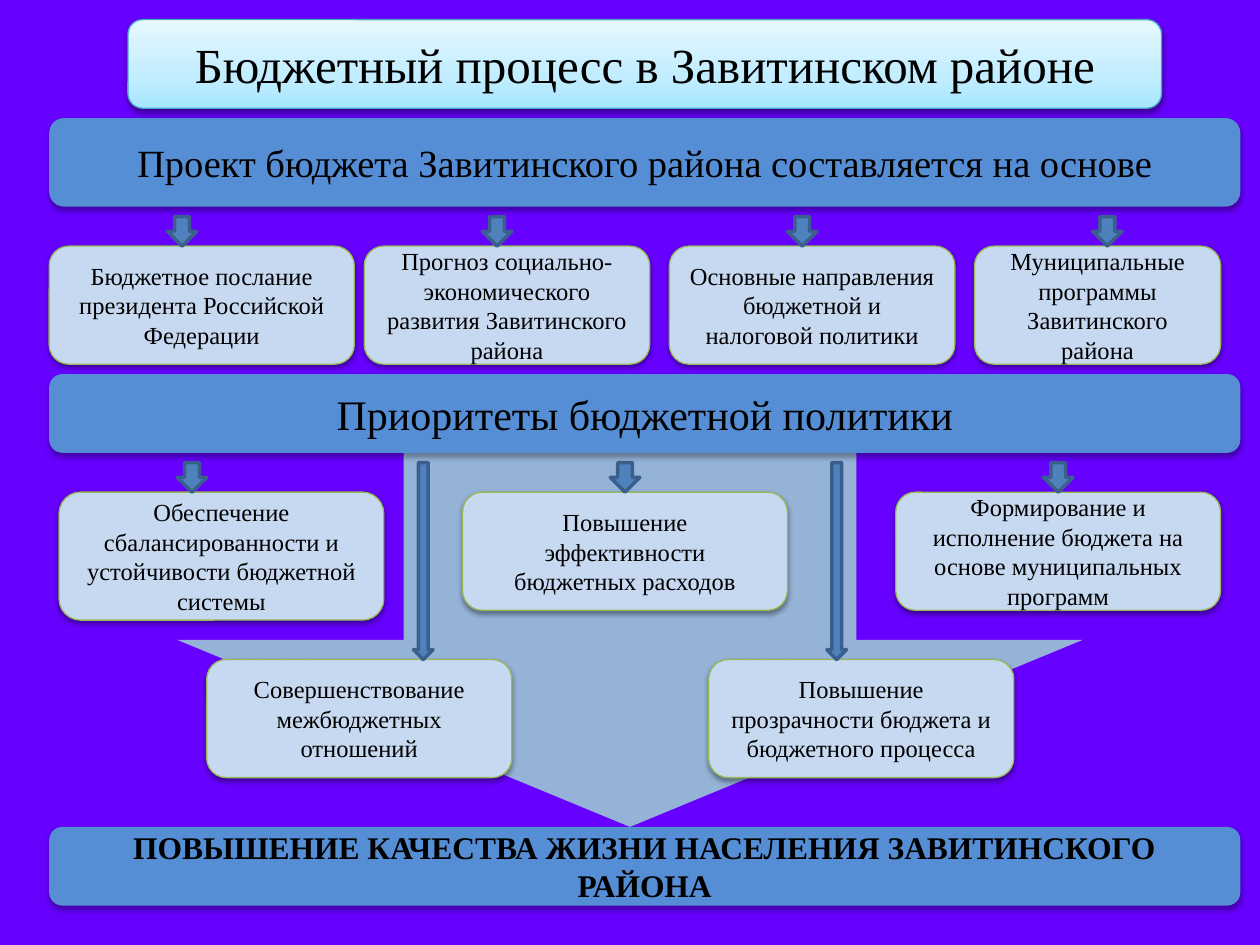
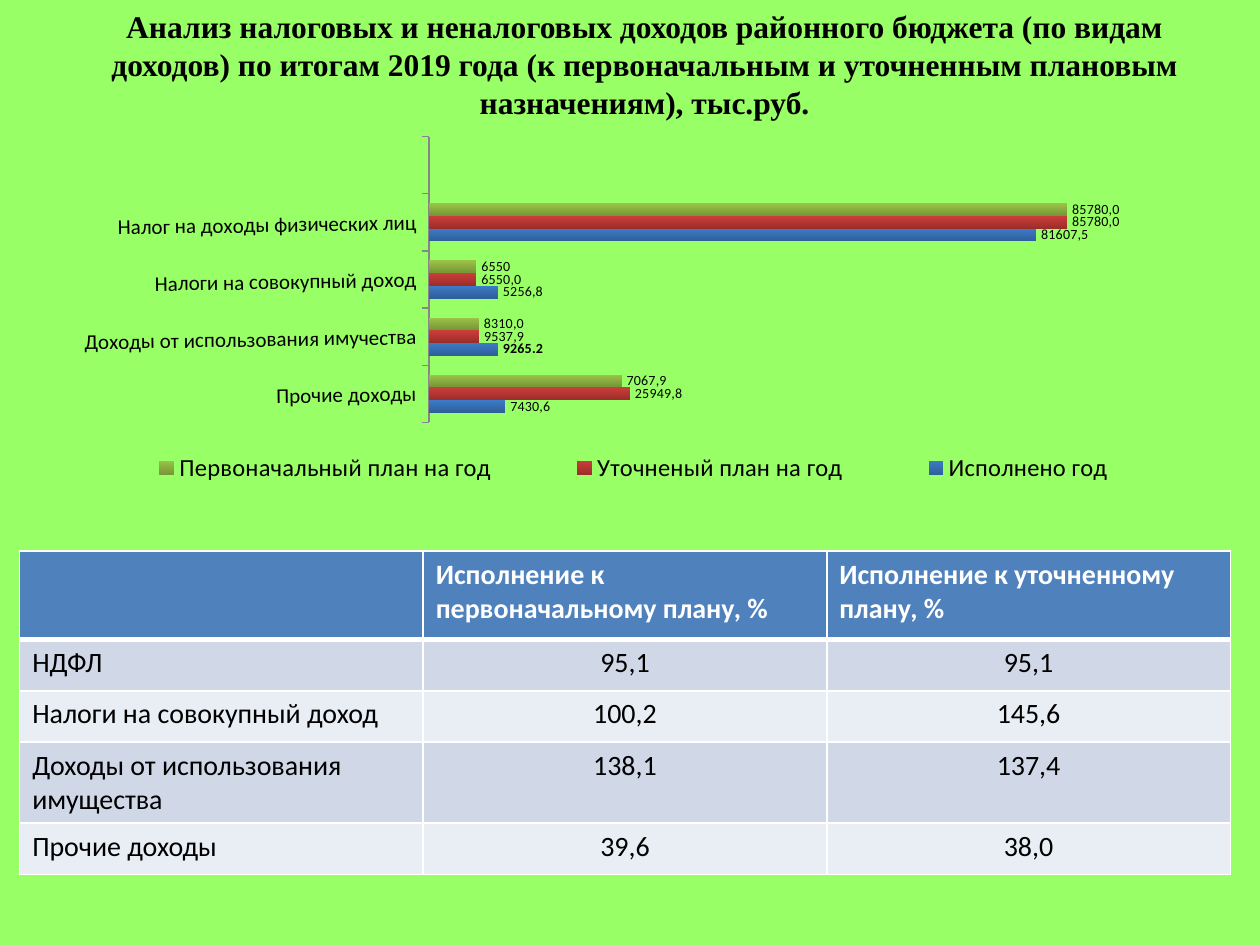
import copy
import pptx
import pptx.chart.data
import pptx.dml.color
import pptx.enum.chart
import pptx.enum.shapes
import pptx.enum.text
import pptx.oxml
import pptx.oxml.ns
import pptx.util
from lxml import etree

Pt = pptx.util.Pt
Rgb = pptx.dml.color.RGBColor.from_string
qn = pptx.oxml.ns.qn
Kind = pptx.enum.shapes.MSO_SHAPE
Align = pptx.enum.text.PP_ALIGN
Place = pptx.enum.chart

HUE = {
    "violet": "6600FF", "lime": "99FF66", "black": "000000", "white": "FFFFFF",
    "band": "558ED5", "card": "C6D9F1", "edge": "98B955", "funnel": "95B3D7",
    "arrow": "4F81BD", "rim": "3A5F8C", "frost": "46AAC5", "axis": "868686",
    "head": "4F81BD", "odd": "D0D8E8", "even": "E9EDF4",
}
SERIF, SANS = "Times New Roman", "Calibri"

deck = pptx.Presentation()
deck.slide_width = pptx.util.Inches(10)
deck.slide_height = pptx.util.Inches(7.5)
UNIT = deck.slide_width // 128  # the slide is a grid of 128 columns by 96 rows


def write(frame, text, size=14, font=SERIF, hue="black", bold=False, align=Align.CENTER):
    para = frame.paragraphs[0]
    para.alignment = align
    run = para.add_run()
    run.text = text
    run.font.size = Pt(size)
    run.font.name = font
    run.font.bold = bold
    run.font.color.rgb = Rgb(HUE[hue])


def block(slide, spot, kind=Kind.ROUNDED_RECTANGLE, fill=None, line=None,
          width=0.75, drop=0, dark=38, text="", **form):
    """Add a shape at spot (column, row, columns, rows); drop is the shadow's distance in points."""
    shape = slide.shapes.add_shape(kind, *[n * UNIT for n in spot])
    shape.shadow.inherit = False
    if fill:
        shape.fill.solid()
        shape.fill.fore_color.rgb = Rgb(HUE[fill])
    else:
        shape.fill.background()
    if line:
        shape.line.color.rgb = Rgb(HUE[line])
        shape.line.width = Pt(width)
    else:
        shape.line.fill.background()
    if drop:
        glow = etree.SubElement(
            shape._element.spPr.find(qn("a:effectLst")), qn("a:outerShdw"),
            blurRad=str(Pt(3.1)), dist=str(Pt(drop)), dir="5400000", rotWithShape="0")
        tint = etree.SubElement(glow, qn("a:srgbClr"), val=HUE["black"])
        etree.SubElement(tint, qn("a:alpha"), val=str(dark * 1000))
    if text:
        shape.text_frame.word_wrap = True
        shape.text_frame.vertical_anchor = pptx.enum.text.MSO_ANCHOR.MIDDLE
        write(shape.text_frame, text, **form)
    return shape


pages = []
for hue in ("violet", "lime"):
    page = deck.slides.add_slide(deck.slide_layouts[6])
    page.background.fill.solid()
    page.background.fill.fore_color.rgb = Rgb(HUE[hue])
    pages.append(page)
flow, review = pages

# Slide 1: budget process
block(flow, (18, 46, 92, 38), Kind.DOWN_ARROW, fill="funnel")

title = block(flow, (13, 2, 105, 9), fill="card", line="frost", drop=1.6,
              text="Бюджетный процесс в Завитинском районе", size=28)
title.fill.gradient()
title.fill.gradient_angle = 90
stops = title.fill.gradient_stops
first = stops[0]._gs
first.addnext(copy.deepcopy(first))
shades = ((0, "A7E6FF"), (0.35, "C1EDFF"), (1, "E7F8FF"))
for stop, (part, shade) in zip(title.fill.gradient_stops, shades):
    stop.position = part
    stop.color.rgb = Rgb(shade)

bands = [
    (12, 9, "Проект бюджета Завитинского района составляется на основе", 22, False),
    (38, 8, "Приоритеты бюджетной политики", 24, False),
    (84, 8, "ПОВЫШЕНИЕ КАЧЕСТВА ЖИЗНИ НАСЕЛЕНИЯ ЗАВИТИНСКОГО РАЙОНА", 18, True),
]
for row, tall, text, size, bold in bands:
    block(flow, (5, row, 121, tall), fill="band", drop=1.8, dark=35,
          text=text, size=size, bold=bold)

cards = [
    (5, 25, 31, 12, "Бюджетное послание президента Российской Федерации"),
    (37, 25, 29, 12, "Прогноз социально-экономического развития Завитинского района"),
    (68, 25, 29, 12, "Основные направления бюджетной и налоговой политики"),
    (99, 25, 25, 12, "Муниципальные программы Завитинского района"),
    (6, 50, 33, 13, "Обеспечение сбалансированности и устойчивости бюджетной системы"),
    (47, 50, 33, 12, "Повышение эффективности бюджетных расходов"),
    (91, 50, 33, 12, "Формирование и исполнение бюджета на основе муниципальных программ"),
    (21, 67, 31, 12, "Совершенствование межбюджетных отношений"),
    (72, 67, 31, 12, "Повышение прозрачности бюджета и бюджетного процесса"),
]
for *spot, text in cards:
    block(flow, spot, fill="card", line="edge", drop=1.6, text=text)

# Each group of arrows: row, width, height, columns
arrows = [(22, 3, 3, (17, 49, 80, 111)), (47, 3, 3, (18, 62, 106)), (47, 2, 20, (42, 84))]
for row, wide, tall, cols in arrows:
    for col in cols:
        block(flow, (col, row, wide, tall), Kind.DOWN_ARROW,
              fill="arrow", line="rim", width=2)

# Slide 2: revenue analysis
block(review, (8, 2, 115, 9), size=18, bold=True,
      text="Анализ налоговых и неналоговых доходов районного бюджета (по видам доходов) "
           "по итогам 2019 года (к первоначальным и уточненным плановым назначениям), тыс.руб.")

# Name, values, label texts by point, dark and light end of the bar
series = [
    ("Исполнено год", (10264.5, 9265.2, 9274.2, 81607.5, None),
     {0: "7430,6", 2: "5256,8", 3: "81607,5"}, "2E5F99", "3C7BC7"),
    ("Уточненый план на год", (27016.1, 6742, 6371, 85780, None),
     {0: "25949,8", 1: "9537,9", 2: "6550,0", 3: "85780,0"}, "9B2D2A", "CB3D3A"),
    ("Первоначальный план на год", (25887.6, 6710, 6371, 85780, None),
     {0: "7067,9", 1: "8310,0", 2: "6550", 3: "85780,0"}, "769535", "9BC348"),
]
data = pptx.chart.data.CategoryChartData()
data.categories = ["Прочие доходы", "Доходы от использования имучества",
                   "Налоги на совокупный доход", "Налог на доходы физических лиц", ""]
for name, vals, *rest in series:
    data.add_series(name, vals)
chart = review.shapes.add_chart(
    Place.XL_CHART_TYPE.BAR_CLUSTERED, *[n * UNIT for n in (2, 13, 126, 44)], data).chart
chart.has_title = False
chart.font.size = Pt(18)
chart.font.name = SANS
chart.font.color.rgb = Rgb(HUE["black"])
plot = chart.plots[0]
plot.gap_width = 150
plot.vary_by_categories = False

for bars, (name, vals, notes, dark, light) in zip(plot.series, series):
    fill = bars.format.fill
    fill.gradient()
    fill.gradient_angle = 90
    for stop, shade in zip(fill.gradient_stops, (dark, light)):
        stop.color.rgb = Rgb(shade)
    tags = bars.data_labels
    tags.show_value = True
    tags.position = Place.XL_LABEL_POSITION.OUTSIDE_END
    tags.font.size = Pt(8)
    tags.font.bold = True
    for spot, note in notes.items():
        tag = bars.points[spot].data_label
        write(tag.text_frame, note, size=8, font=SANS)
        tag.position = Place.XL_LABEL_POSITION.OUTSIDE_END

scale = chart.value_axis
scale.minimum_scale, scale.maximum_scale = 0, 100000
scale.has_major_gridlines = False
scale.visible = False
kinds = chart.category_axis
kinds.major_tick_mark = Place.XL_TICK_MARK.OUTSIDE
kinds.format.line.color.rgb = Rgb(HUE["axis"])
kinds.tick_labels.font.size = Pt(12)
kinds._element.find(qn("c:txPr")).find(qn("a:bodyPr")).set("rot", "-60000")

chart.has_legend = True
legend = chart.legend
legend.position = Place.XL_LEGEND_POSITION.RIGHT
legend.include_in_layout = False
legend.font.size = Pt(14)

# Shares of the chart's size: left, top, width, height
frames = [(plot._element.getparent(), (0.33, 0.02, 0.6, 0.66), True),
          (legend._element, (0.05, 0.73, 0.89, 0.11), False)]
for host, shares, inner in frames:
    for old in host.findall(qn("c:layout")):
        host.remove(old)
    layout = etree.Element(qn("c:layout"))
    manual = etree.SubElement(layout, qn("c:manualLayout"))
    if inner:
        etree.SubElement(manual, qn("c:layoutTarget"), val="inner")
        host.insert(0, layout)
    else:
        host.find(qn("c:legendPos")).addnext(layout)
    for mode in ("xMode", "yMode"):
        etree.SubElement(manual, qn("c:" + mode), val="edge")
    for side, share in zip("xywh", shares):
        etree.SubElement(manual, qn("c:" + side), val=str(share))

rows = [
    ("", "Исполнение к первоначальному плану, %", "Исполнение к уточненному плану, %"),
    ("НДФЛ", "95,1", "95,1"),
    ("Налоги на совокупный доход", "100,2", "145,6"),
    ("Доходы от использования имущества", "138,1", "137,4"),
    ("Прочие доходы", "39,6", "38,0"),
]
grid = review.shapes.add_table(
    len(rows), 3, *[int(n * UNIT) for n in (2, 56, 123, 30)]).table
for col in grid.columns:
    col.width = 41 * UNIT
for r, texts in enumerate(rows):
    top = r == 0
    grid.rows[r].height = 9 * UNIT if top else int(5.2 * UNIT)
    for c, text in enumerate(texts):
        cell = grid.cell(r, c)
        if text:
            write(cell.text_frame, text, size=16, font=SANS, bold=top,
                  hue="white" if top else "black",
                  align=Align.LEFT if top or c == 0 else Align.CENTER)
        props = cell._tc.get_or_add_tcPr()
        for side in ("L", "R", "T", "B"):
            thick = 3 if (r, side) in ((0, "B"), (1, "T")) else 1
            edge = etree.SubElement(props, qn("a:ln" + side), w=str(Pt(thick)))
            paint = etree.SubElement(edge, qn("a:solidFill"))
            etree.SubElement(paint, qn("a:srgbClr"), val=HUE["white"])
        cell.fill.solid()
        cell.fill.fore_color.rgb = Rgb(HUE["head" if top else "odd" if r % 2 else "even"])

deck.save("out.pptx")
